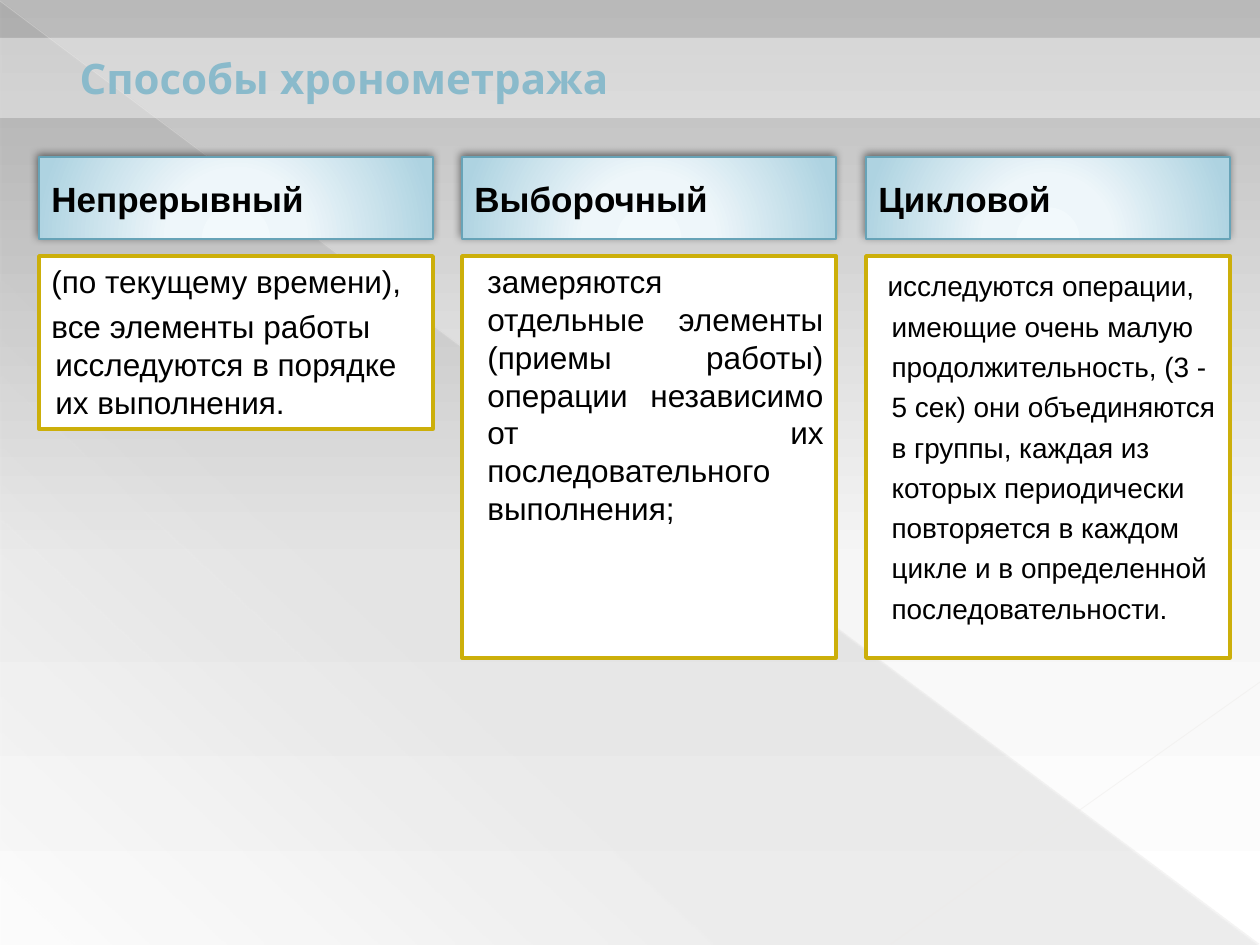
from dataclasses import dataclass

from lxml.etree import SubElement
from pptx import Presentation
from pptx.dml.color import RGBColor
from pptx.enum.shapes import MSO_CONNECTOR, MSO_SHAPE
from pptx.enum.text import MSO_ANCHOR, MSO_AUTO_SIZE, PP_ALIGN
from pptx.oxml.ns import qn
from pptx.util import Emu, Pt

EMU_PER_PX = 914400 / 126
WIDTH, HEIGHT = 1260, 945
HEADING_TOP, HEADING_HEIGHT = 157, 82
DETAIL_TOP = 256


@dataclass(frozen=True)
class Stop:
    position: int
    color: str
    opacity: int = 100


@dataclass(frozen=True)
class Method:
    heading: str
    details: tuple[str, ...]
    left: int
    width: int
    height: int
    margin: int
    indent: int
    align: PP_ALIGN = PP_ALIGN.LEFT
    size: int = 18
    line_spacing: float = 1.0
    in_body: bool = False


METHODS = [
    Method(
        "Непрерывный",
        (
            "(по текущему времени),",
            "все элементы работы исследуются в порядке их выполнения.",
        ),
        39, 394, 173, 4, -4,
    ),
    Method(
        "Выборочный",
        (
            "замеряются отдельные элементы (приемы работы) операции "
            "независимо от их последовательного выполнения;",
        ),
        462, 374, 402, 13, 0, align=PP_ALIGN.JUSTIFY,
    ),
    Method(
        "Цикловой",
        (
            "исследуются операции, имеющие очень малую продолжительность, "
            "(3 - 5 сек) они объединяются в группы, каждая из которых "
            "периодически повторяется в каждом цикле и в определенной "
            "последовательности.",
        ),
        866, 364, 402, 13, -4, size=16, line_spacing=1.2, in_body=True,
    ),
]

BACKDROP = [Stop(0, "B9B9B9"), Stop(60, "F6F6F6"), Stop(100, "FFFFFF")]
SHADE = [Stop(0, "3B3B3B", 10), Stop(70, "3B3B3B", 8), Stop(100, "3B3B3B", 1)]
GLOW = [Stop(0, "F2F9FC"), Stop(34, "EEF6FA"), Stop(100, "AED3E1")]


def px(length: int) -> Emu:
    return Emu(round(length * EMU_PER_PX))


def rgb(color: str) -> RGBColor:
    return RGBColor.from_string(color)


def add_color(parent, color: str, opacity: int = 100) -> None:
    clr = SubElement(parent, qn("a:srgbClr"), val=color)
    if opacity < 100:
        SubElement(clr, qn("a:alpha"), val=str(opacity * 1000))


def fade(color_format_owner, opacity: int) -> None:
    clr = color_format_owner.find(".//" + qn("a:srgbClr"))
    SubElement(clr, qn("a:alpha"), val=str(opacity * 1000))


def set_gradient(owner, fill, stops: list[Stop], angle: int | None = None) -> None:
    fill.gradient()
    gradient = owner.find(".//" + qn("a:gradFill"))
    for child in list(gradient):
        gradient.remove(child)
    stop_list = SubElement(gradient, qn("a:gsLst"))
    for stop in stops:
        entry = SubElement(stop_list, qn("a:gs"), pos=str(stop.position * 1000))
        add_color(entry, stop.color, stop.opacity)
    if angle is None:
        circle = SubElement(gradient, qn("a:path"), path="circle")
        SubElement(circle, qn("a:fillToRect"), l="50000", t="155000", r="50000", b="-55000")
    else:
        SubElement(gradient, qn("a:lin"), ang=str(angle * 60000), scaled="0")


def place(shape, left: int, top: int, width: int, height: int) -> None:
    shape.left, shape.top = px(left), px(top)
    shape.width, shape.height = px(width), px(height)


def add_box(slide, kind, left: int, top: int, width: int, height: int):
    box = slide.shapes.add_shape(kind, px(left), px(top), px(width), px(height))
    box.shadow.inherit = False
    return box


def add_ray(slide, start: tuple[int, int], end: tuple[int, int],
            color: str, weight: float, opacity: int) -> None:
    ray = slide.shapes.add_connector(
        MSO_CONNECTOR.STRAIGHT, *(px(value) for value in start + end))
    ray.line.color.rgb = rgb(color)
    ray.line.width = Pt(weight)
    properties = ray.element.spPr
    fade(properties, opacity)
    SubElement(properties, qn("a:effectLst"))


def format_paragraph(paragraph, size: int, color: str, font_name: str = "Arial",
                     bold: bool = False, margin: int = 0, indent: int = 0,
                     align: PP_ALIGN = PP_ALIGN.LEFT) -> None:
    paragraph.alignment = align
    properties = paragraph._p.get_or_add_pPr()
    properties.set("marL", str(px(margin)))
    properties.set("indent", str(px(indent)))
    paragraph.space_before = Pt(0)
    SubElement(properties, qn("a:buNone"))
    font = paragraph.font
    font.name, font.size, font.bold = font_name, Pt(size), bold
    font.color.rgb = rgb(color)


def draw_backdrop(slide) -> None:
    set_gradient(slide.element, slide.background.fill, BACKDROP, 90)
    shade = add_box(slide, MSO_SHAPE.RIGHT_TRIANGLE, 1, 2, 1258, 943)
    set_gradient(shade.element, shade.fill, SHADE, 133)
    shade.line.fill.background()
    add_ray(slide, (0, 1), (1259, 944), "EAE8E6", 0.39, 35)
    add_ray(slide, (WIDTH, 682), (891, 944), "ECEAE8", 0.47, 45)


def draw_title(slide) -> None:
    title = slide.shapes.title
    slide.shapes._spTree.append(title.element)
    place(title, 0, 38, WIDTH, 80)
    title.fill.solid()
    title.fill.fore_color.rgb = rgb("FFFFFF")
    fade(title.element.spPr, 40)
    frame = title.text_frame
    frame.auto_size = MSO_AUTO_SIZE.NONE
    frame.vertical_anchor = MSO_ANCHOR.MIDDLE
    frame.text = "Способы хронометража"
    paragraph = frame.paragraphs[0]
    format_paragraph(paragraph, 24, "8ABACB", "League Spartan", True, margin=67)
    outline = SubElement(paragraph.runs[0]._r.get_or_add_rPr(), qn("a:ln"), w="6350")
    add_color(SubElement(outline, qn("a:solidFill")), "4C6F7A")


def draw_heading(slide, method: Method) -> None:
    heading = add_box(slide, MSO_SHAPE.RECTANGLE, method.left, HEADING_TOP,
                      method.width, HEADING_HEIGHT)
    set_gradient(heading.element, heading.fill, GLOW)
    heading.line.color.rgb = rgb("67A3B7")
    heading.line.width = Pt(0.75)
    effects = heading.element.spPr.find(qn("a:effectLst"))
    shadow = SubElement(effects, qn("a:outerShdw"), blurRad=str(Pt(5)), dist=str(Pt(2)),
                        dir=str(245 * 60000), algn="ctr", rotWithShape="0")
    add_color(shadow, "000000", 50)
    frame = heading.text_frame
    frame.word_wrap = True
    frame.vertical_anchor = MSO_ANCHOR.MIDDLE
    frame.margin_top = frame.margin_bottom = px(20)
    frame.text = method.heading
    format_paragraph(frame.paragraphs[0], 20, "000000", bold=True)


def draw_details(slide, method: Method) -> None:
    bounds = method.left, DETAIL_TOP, method.width, method.height
    if method.in_body:
        details = slide.placeholders[1]
        slide.shapes._spTree.append(details.element)
        place(details, *bounds)
    else:
        details = add_box(slide, MSO_SHAPE.RECTANGLE, *bounds)
    details.fill.solid()
    details.fill.fore_color.rgb = rgb("FFFFFF")
    details.line.color.rgb = rgb("CCAF0A")
    details.line.width = Pt(2)
    frame = details.text_frame
    frame.word_wrap = True
    frame.auto_size = MSO_AUTO_SIZE.NONE
    frame.vertical_anchor = MSO_ANCHOR.TOP
    frame.text = "\n".join(method.details)
    for position, paragraph in enumerate(frame.paragraphs):
        paragraph.line_spacing = method.line_spacing
        format_paragraph(paragraph, method.size, "000000", margin=method.margin,
                         indent=method.indent, align=method.align)
        if position:
            paragraph.space_before = Pt(4)


def main() -> None:
    presentation = Presentation()
    presentation.slide_width, presentation.slide_height = px(WIDTH), px(HEIGHT)
    slide = presentation.slides.add_slide(presentation.slide_layouts[1])
    draw_backdrop(slide)
    draw_title(slide)
    for method in METHODS:
        draw_details(slide, method)
        draw_heading(slide, method)
    presentation.save("out.pptx")


if __name__ == "__main__":
    main()
